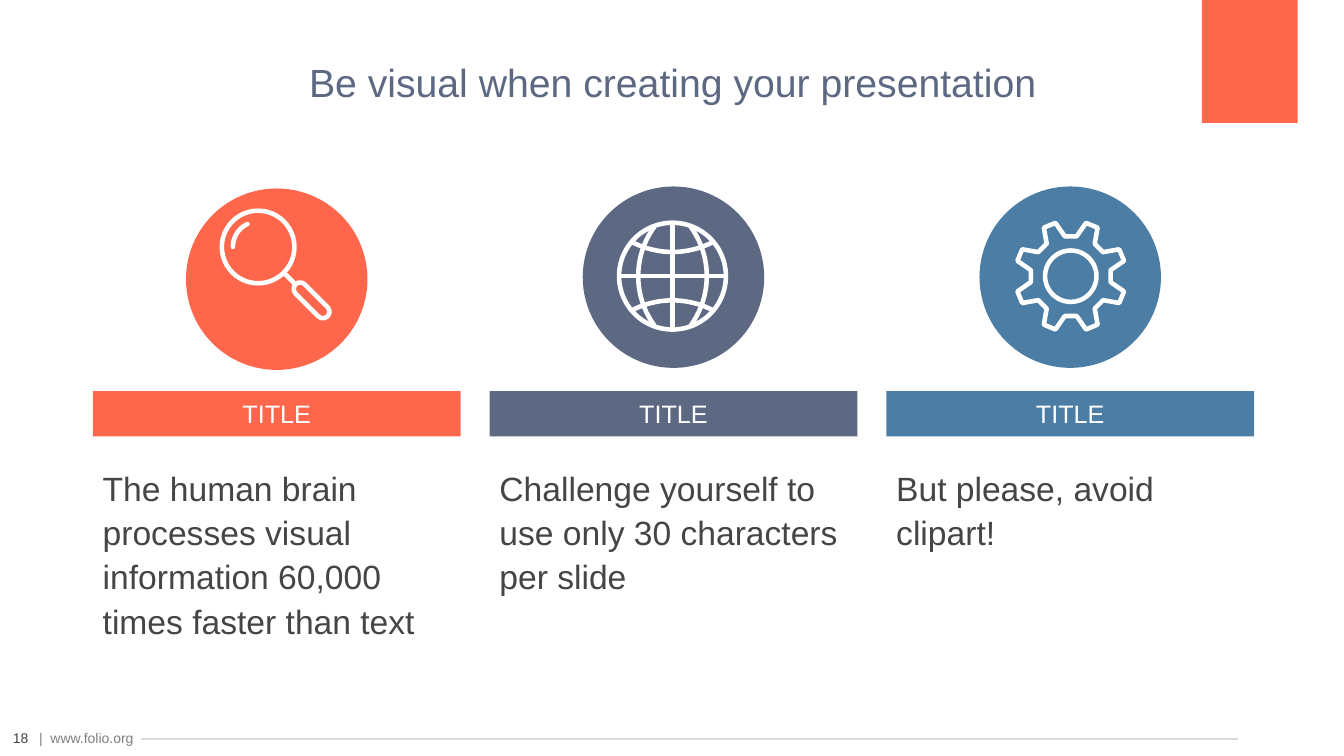
from dataclasses import dataclass
from math import cos, radians, sin

from lxml.etree import SubElement
from pptx import Presentation
from pptx.dml.color import RGBColor
from pptx.enum.shapes import MSO_CONNECTOR, MSO_SHAPE
from pptx.enum.text import MSO_ANCHOR, MSO_AUTO_SIZE, PP_ALIGN
from pptx.oxml.ns import qn
from pptx.util import Inches, Pt

TITLE = "Be visual when creating your presentation"
COLUMNS = [
    ("TITLE", "The human brain processes visual information 60,000 times faster than text",
     "coral", 1.87, 1.84),
    ("TITLE", "Challenge yourself to use only 30 characters per slide", "slate", 1.85, 1.43),
    ("TITLE", "But please, avoid clipart!", "blue", 1.85, 0.99),
]
FOOTER = "|  www.folio.org"
PAGE = "18"


@dataclass(frozen=True)
class Theme:
    font: str = "Arial"
    coral: str = "FF674C"
    slate: str = "5D6883"
    blue: str = "4C7EA5"
    white: str = "FFFFFF"
    text: str = "454545"
    muted: str = "808080"
    rule: str = "D9D9D9"
    title_size: int = 28
    body_size: int = 24
    label_size: int = 18
    footer_size: int = 10
    icon_line: float = 3.25


T = Theme()
LEFT, PITCH, COL_W = 0.92, 3.935, 3.65
CIRCLE = 1.8

prs = Presentation()
prs.slide_width, prs.slide_height = Inches(13.33), Inches(7.5)
s = prs.slides.add_slide(prs.slide_layouts[5])


def rgb(color):
    return RGBColor.from_string(color)


def box(*lengths):
    return [Inches(v) for v in lengths]


def write(shape, text, size, color, align=PP_ALIGN.LEFT, anchor=MSO_ANCHOR.TOP, spacing=None):
    tf = shape.text_frame
    tf.word_wrap = True
    tf.auto_size = MSO_AUTO_SIZE.NONE
    tf.vertical_anchor = anchor
    tf.text = text
    p = tf.paragraphs[0]
    p.alignment = align
    p.line_spacing = spacing
    p.font.name, p.font.size = T.font, Pt(size)
    p.font.color.rgb = rgb(color)


def filled(kind, color, *at):
    sp = s.shapes.add_shape(kind, *box(*at))
    sp.shadow.inherit = False
    sp.fill.solid()
    sp.fill.fore_color.rgb = rgb(color)
    sp.line.fill.background()
    return sp


def outline(sp):
    sp.shadow.inherit = False
    sp.fill.background()
    sp.line.color.rgb = rgb(T.white)
    sp.line.width = Pt(T.icon_line)
    sp.element.spPr.find(qn("a:ln")).set("cap", "rnd")
    return sp


def line(x1, y1, x2, y2, color, width):
    c = s.shapes.add_connector(MSO_CONNECTOR.STRAIGHT, *box(x1, y1, x2, y2))
    c.line.color.rgb = rgb(color)
    c.line.width = Pt(width)
    SubElement(c.element.spPr, qn("a:effectLst"))


def ring(cx, cy, r):
    outline(s.shapes.add_shape(MSO_SHAPE.OVAL, *box(cx - r, cy - r, 2 * r, 2 * r)))


def polar(cx, cy, r, angle):
    return cx + r * cos(radians(angle)), cy + r * sin(radians(angle))


def stroke(points, close=False):
    pts = [box(*pt) for pt in points]
    fb = s.shapes.build_freeform(*pts[0], scale=1.0)
    fb.add_line_segments(pts[1:], close=close)
    outline(fb.convert_to_shape())


def arc(cx, cy, r, start, end, steps=20):
    stroke([polar(cx, cy, r, start + (end - start) * i / steps) for i in range(steps + 1)])


def magnifier(cx, cy):
    ring(cx, cy, 0.36)
    arc(cx, cy, 0.25, 180, 245)
    line(cx + 0.26, cy + 0.26, cx + 0.38, cy + 0.38, T.white, T.icon_line)
    w, h = 0.45, 0.13
    grip = outline(s.shapes.add_shape(
        MSO_SHAPE.ROUNDED_RECTANGLE, *box(cx + 0.53 - w / 2, cy + 0.53 - h / 2, w, h)))
    grip.adjustments[0] = 0.5
    grip.rotation = 45


def globe(cx, cy):
    r = 0.53
    ring(cx, cy, r)
    line(cx, cy - r, cx, cy + r, T.white, T.icon_line)
    line(cx - r, cy, cx + r, cy, T.white, T.icon_line)
    for side, turn in ((1, 180), (-1, 0)):
        arc(cx + side * 0.49, cy, 0.83, turn - 36, turn + 36)
    for side, turn in ((-1, 90), (1, 270)):
        arc(cx, cy + side * 1.11, 0.87, turn - 27, turn + 27)


def gear(cx, cy):
    tooth = [(0.4, -14), (0.55, -6.5), (0.55, 6.5), (0.4, 14)]
    stroke([polar(cx, cy, r, 22.5 + 45 * i + a) for i in range(8) for r, a in tooth], close=True)
    ring(cx, cy, 0.255)


ICONS = [(magnifier, 2.56, 2.45), (globe, 6.67, 2.74), (gear, 10.62, 2.74)]

write(s.shapes.add_textbox(*box(0.29, 7.19, 1.94, 0.27)), FOOTER, T.footer_size, T.muted)
write(s.shapes.add_textbox(*box(-0.04, 7.19, 0.49, 0.27)), PAGE, T.footer_size, T.text,
      PP_ALIGN.CENTER, MSO_ANCHOR.MIDDLE)
line(1.4, 7.33, 12.28, 7.33, T.rule, 1)
filled(MSO_SHAPE.RECTANGLE, T.coral, 11.92, 0, 0.95, 1.22)

title = s.shapes.title
title.left, title.top, title.width, title.height = box(LEFT, 0.43, 11.5, 0.71)
write(title, TITLE, T.title_size, T.slate, PP_ALIGN.CENTER, MSO_ANCHOR.MIDDLE, 1.1)

for i, (label, body, hue, circle_top, body_h) in enumerate(COLUMNS):
    x = LEFT + i * PITCH
    color = getattr(T, hue)
    filled(MSO_SHAPE.OVAL, color, x + (COL_W - CIRCLE) / 2, circle_top, CIRCLE, CIRCLE)
    bar = filled(MSO_SHAPE.RECTANGLE, color, x, 3.88, COL_W, 0.45)
    write(bar, label, T.label_size, T.white, PP_ALIGN.CENTER, MSO_ANCHOR.MIDDLE)
    write(s.shapes.add_textbox(*box(x, 4.55, COL_W, body_h)), body, T.body_size, T.text,
          spacing=1.1)

for draw, cx, cy in ICONS:
    draw(cx, cy)

prs.save("out.pptx")
